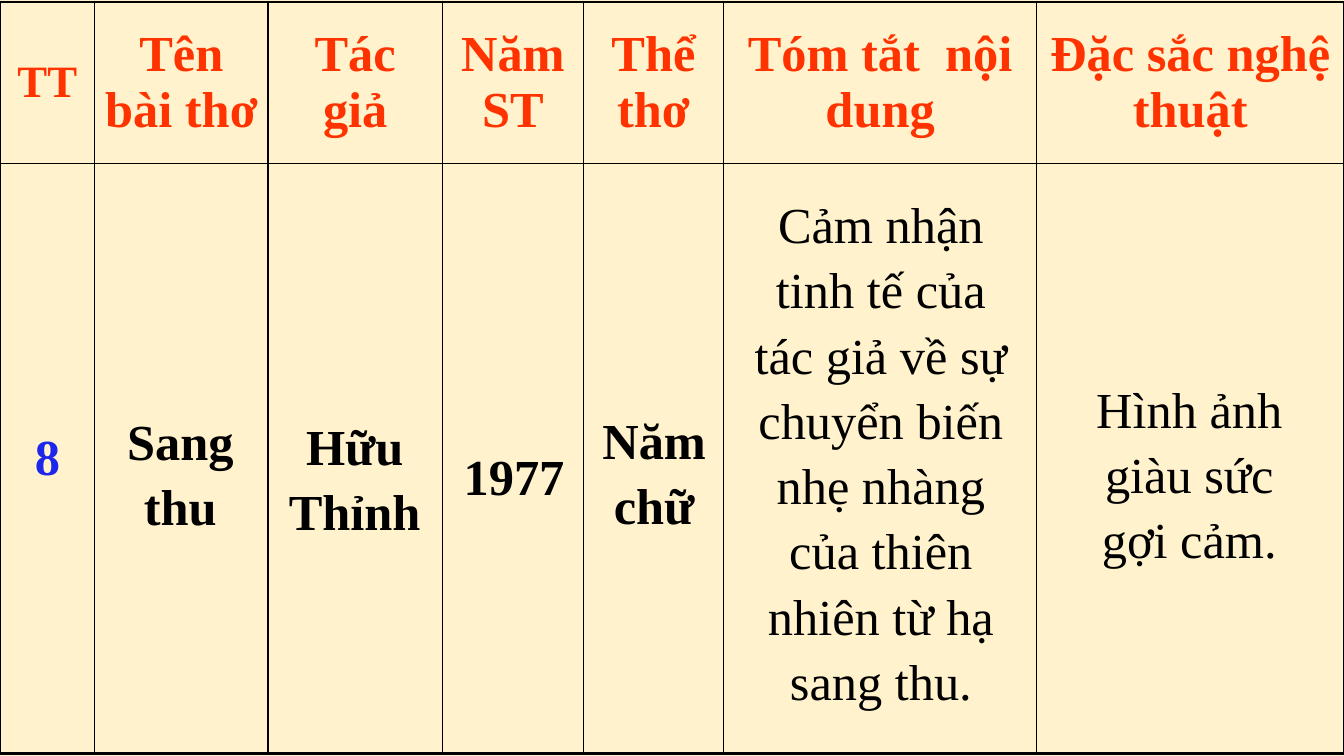
"""Build a one-slide table summing up a poem."""
from dataclasses import dataclass

from lxml import etree
from pptx import Presentation
from pptx.dml.color import RGBColor
from pptx.enum.text import MSO_ANCHOR, MSO_AUTO_SIZE, PP_ALIGN
from pptx.oxml.ns import qn
from pptx.util import Pt

MIDDLE = MSO_ANCHOR.MIDDLE
CENTER = PP_ALIGN.CENTER
GROW = MSO_AUTO_SIZE.SHAPE_TO_FIT_TEXT

CREAM = RGBColor(0xFF, 0xF2, 0xCC)
RED = RGBColor(0xFF, 0x33, 0x00)
BLUE = RGBColor(0x1D, 0x27, 0xEB)
BLACK = RGBColor(0x00, 0x00, 0x00)
FONT = "Times New Roman"
THIN, THICK = 1, 2.25


@dataclass
class Head:
    """A column heading."""
    text: str
    width: float
    size: float = 36


@dataclass
class Note:
    """A text laid over a cell of the body row."""
    text: str
    left: float
    top: float
    width: float
    height: float
    bold: bool = True
    before: float = 6
    indent: float = 0


HEADS = [
    Head("TT", 67.7, 32),
    Head("Tên bài thơ", 123.8),
    Head("Tác giả", 124.5),
    Head("Năm ST", 100.8),
    Head("Thể thơ", 100),
    Head("Tóm tắt  nội dung", 223.8),
    Head("Đặc sắc nghệ thuật", 219.4),
]
ROWS = [115.2, 421.9]
NOTES = [
    Note("Sang thu", 69.8, 285.8, 118.1, 94.3),
    Note("Hữu Thỉnh", 187.9, 289.4, 131, 94.3),
    Note("1977", 320.4, 311, 93.6, 51.1),
    Note("Năm chữ", 420.5, 285.1, 93.6, 94.3),
    Note("Cảm nhận tinh tế của tác giả về sự chuyển biến nhẹ nhàng "
         "của thiên nhiên từ hạ sang thu.",
         522, 131, 213.1, 356.4, False, 0, 1.4),
    Note("Hình ảnh giàu sức gợi cảm.",
         753.1, 262.8, 191.5, 138.2, False, 0, 1.4),
]


def write(frame, text: str, color: RGBColor, size: float = 36,
          bold: bool = True, before: float = 6):
    """Set one centred paragraph and return it."""
    frame.text = text
    para = frame.paragraphs[0]
    para.alignment = CENTER
    para.space_before = Pt(before)
    font = para.runs[0].font
    font.name, font.size, font.bold = FONT, Pt(size), bold
    font.color.rgb = color
    return para


def edge(cell, sides: dict[str, float]) -> None:
    """Draw the borders of a cell, given in the order L, R, T, B."""
    props = cell._tc.get_or_add_tcPr()
    for spot, (side, width) in enumerate(sides.items()):
        line = etree.Element(qn(f"a:ln{side}"), w=str(Pt(width)))
        fill = etree.SubElement(line, qn("a:solidFill"))
        etree.SubElement(fill, qn("a:srgbClr"), val=str(BLACK))
        props.insert(spot, line)


def add_grid(slide) -> None:
    """Add the table with its headings and borders."""
    wide = sum(head.width for head in HEADS)
    grid = slide.shapes.add_table(len(ROWS), len(HEADS), Pt(0), Pt(1.4),
                                  Pt(wide), Pt(sum(ROWS))).table
    for row, height in zip(grid.rows, ROWS):
        row.height = Pt(height)
    for col, head in enumerate(HEADS):
        grid.columns[col].width = Pt(head.width)
        write(grid.cell(0, col).text_frame, head.text, RED, head.size)
        for row in range(len(ROWS)):
            cell = grid.cell(row, col)
            cell.vertical_anchor = MIDDLE
            cell.fill.background()
            edge(cell, {
                "L": THICK if col == 0 else THIN,
                "R": THICK if col == len(HEADS) - 1 else THIN,
                "T": THICK if row == 0 else THIN,
                "B": THICK if row == len(ROWS) - 1 else THIN,
            })
    write(grid.cell(1, 0).text_frame, "8", BLUE)


def add_note(slide, note: Note) -> None:
    """Add one text box over the body row."""
    box = slide.shapes.add_textbox(Pt(note.left), Pt(note.top),
                                   Pt(note.width), Pt(note.height))
    frame = box.text_frame
    frame.word_wrap = True
    frame.auto_size = GROW
    para = write(frame, note.text, BLACK, bold=note.bold, before=note.before)
    para.line_spacing = 1.08
    if note.indent:
        props = para._p.get_or_add_pPr()
        props.set("marL", str(Pt(note.indent)))
        props.set("indent", "0")


def main() -> None:
    """Build and save the slide."""
    deck = Presentation()
    deck.slide_width, deck.slide_height = Pt(960), Pt(540)
    slide = deck.slides.add_slide(deck.slide_layouts[6])
    back = slide.background.fill
    back.solid()
    back.fore_color.rgb = CREAM
    add_grid(slide)
    for note in NOTES:
        add_note(slide, note)
    deck.save("out.pptx")


if __name__ == "__main__":
    main()
